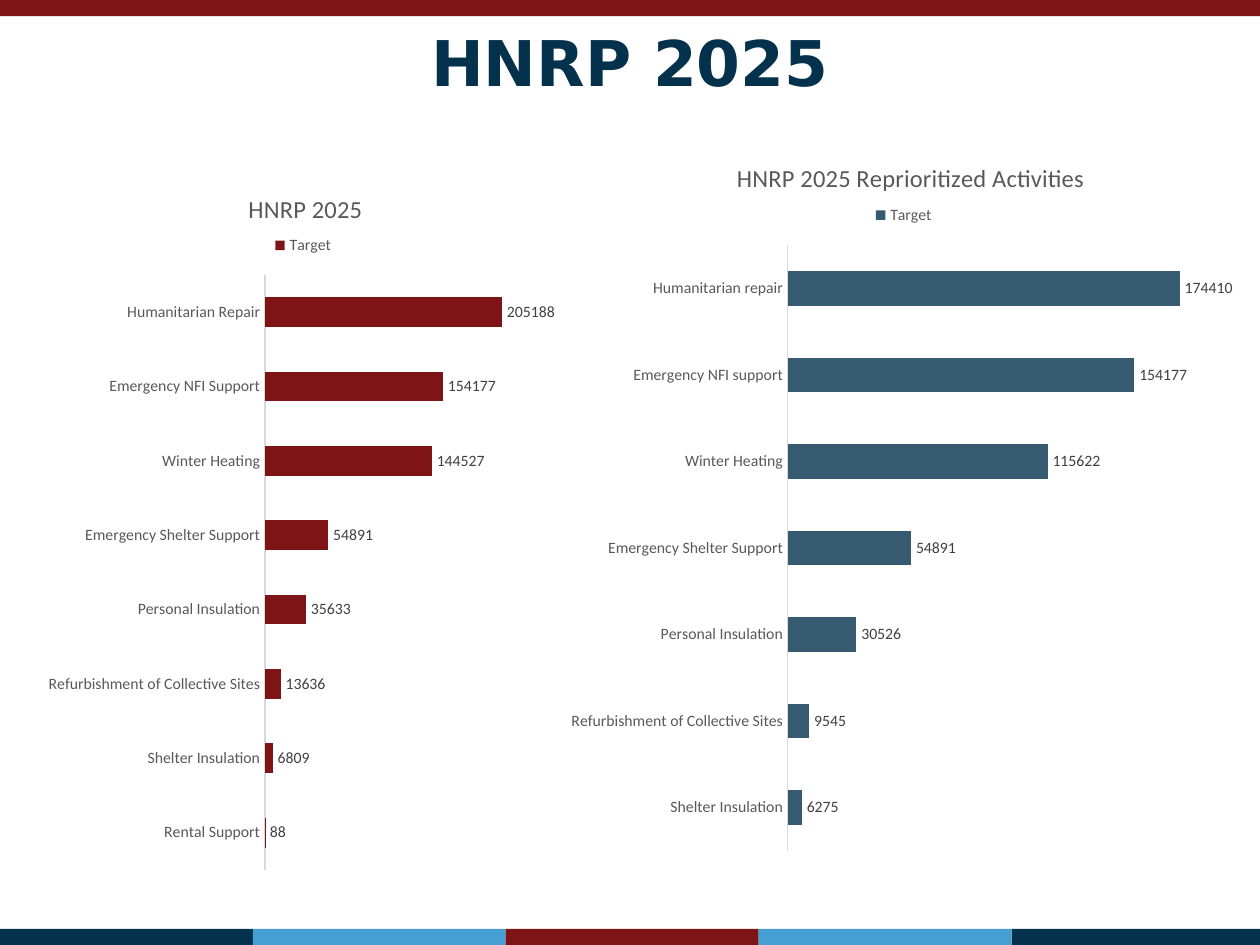
from lxml import etree
from pptx import Presentation
from pptx.chart.data import CategoryChartData
from pptx.dml.color import RGBColor
from pptx.enum import chart as ch, text
from pptx.oxml.ns import qn
from pptx.util import Pt

COLORS = {
    "navy": "04314C", "sky": "459FD5", "red": "7F1416", "slate": "365A70",
    "axis": "D9D9D9", "muted": "595959", "value": "404040",
}
SLIDE_W, SLIDE_H, STRIP_H = 720, 540, 9.2
FOOTER = ["navy", "sky", "red", "sky", "navy"]
FOOTER_STEP = 144.5

ORIGINAL_TARGETS = {
    "Rental Support": 88,
    "Shelter Insulation": 6809,
    "Refurbishment of Collective Sites": 13636,
    "Personal Insulation": 35633,
    "Emergency Shelter Support": 54891,
    "Winter Heating": 144527,
    "Emergency NFI Support": 154177,
    "Humanitarian Repair": 205188,
}
REPRIORITIZED_TARGETS = {
    "Shelter Insulation": 6275,
    "Refurbishment of Collective Sites": 9545,
    "Personal Insulation": 30526,
    "Emergency Shelter Support": 54891,
    "Winter Heating": 115622,
    "Emergency NFI support": 154177,
    "Humanitarian repair": 174410,
}


def rgb(name):
    return RGBColor.from_string(COLORS[name])


def style_font(font, size, color, name="Calibri", bold=False):
    font.name, font.size, font.bold = name, Pt(size), bold
    font.color.rgb = rgb(color)


def add_strip(slide, left, top, width, color):
    strip = slide.shapes.add_shape(1, Pt(left), Pt(top), Pt(width), Pt(STRIP_H))
    strip.shadow.inherit = False
    strip.fill.solid()
    strip.fill.fore_color.rgb = rgb(color)
    strip.line.fill.background()


def add_title(slide, wording):
    title = slide.shapes.title
    title.left, title.top, title.width, title.height = Pt(36), Pt(21.6), Pt(648), Pt(26.6)
    frame = title.text_frame
    frame.text = wording
    frame.auto_size = text.MSO_AUTO_SIZE.NONE
    frame.vertical_anchor = text.MSO_ANCHOR.MIDDLE
    frame.margin_top = frame.margin_bottom = 0
    heading = frame.paragraphs[0]
    heading.alignment = text.PP_ALIGN.CENTER
    style_font(heading.font, 36, "navy", "DejaVu Sans", True)


def set_layout(part, index, **fractions):
    """Place a chart part by fractions of the chart's size."""
    for old in part.findall(qn("c:layout")):
        part.remove(old)
    layout = etree.Element(qn("c:layout"))
    manual = etree.SubElement(layout, qn("c:manualLayout"))
    settings = {"xMode": "edge", "yMode": "edge", **fractions}
    if "w" in fractions:
        settings = {"layoutTarget": "inner", **settings}
    for tag, value in settings.items():
        etree.SubElement(manual, qn(f"c:{tag}")).set("val", str(value))
    part.insert(index, layout)


def add_target_chart(slide, box, title, targets, color, axis_max, title_x, legend_x, plot):
    data = CategoryChartData()
    data.categories = list(targets)
    data.add_series("Target", list(targets.values()))
    chart = slide.shapes.add_chart(
        ch.XL_CHART_TYPE.BAR_CLUSTERED, *map(Pt, box), data).chart
    chart.font.name, chart.font.size = "Calibri", Pt(10)

    chart.has_title = True
    heading = chart.chart_title.text_frame
    heading.text = title
    style_font(heading.paragraphs[0].font, 14, "muted")

    chart.has_legend = True
    chart.legend.position = ch.XL_LEGEND_POSITION.TOP
    chart.legend.include_in_layout = False
    style_font(chart.legend.font, 9, "muted")

    activities, values = chart.category_axis, chart.value_axis
    activities.major_tick_mark = activities.minor_tick_mark = ch.XL_TICK_MARK.NONE
    activities.format.line.color.rgb = rgb("axis")
    activities.format.line.width = Pt(0.75)
    style_font(activities.tick_labels.font, 9, "muted")
    values.visible = values.has_major_gridlines = False
    values.minimum_scale, values.maximum_scale = 0, axis_max

    bars = chart.plots[0]
    bars.gap_width, bars.overlap, bars.vary_by_categories = 150, -25, False
    target = bars.series[0]
    target.format.fill.solid()
    target.format.fill.fore_color.rgb = rgb(color)
    labels = target.data_labels
    labels.show_value = True
    labels.position = ch.XL_LABEL_POSITION.OUTSIDE_END
    style_font(labels.font, 9, "value")

    body = chart.element.find(qn("c:chart"))
    set_layout(body.find(qn("c:title")), 1, x=title_x, y=0.04)
    set_layout(body.find(qn("c:legend")), 1, x=legend_x, y=0.1)
    set_layout(body.find(qn("c:plotArea")), 0, **plot)


def main():
    prs = Presentation()
    prs.slide_width, prs.slide_height = Pt(SLIDE_W), Pt(SLIDE_H)
    slide = prs.slides.add_slide(prs.slide_layouts.get_by_name("Title Only"))

    add_strip(slide, 0, 0, SLIDE_W, "red")
    for i, color in enumerate(FOOTER):
        left = i * FOOTER_STEP
        add_strip(slide, left, SLIDE_H - STRIP_H, min(FOOTER_STEP, SLIDE_W - left), color)

    add_title(slide, "HNRP 2025")
    add_target_chart(
        slide, (319.7, 72.7, 395.3, 421.9), "HNRP 2025 Reprioritized Activities",
        REPRIORITIZED_TARGETS, "slate", 200000, 0.25, 0.45,
        {"x": 0.33, "y": 0.16, "w": 0.65, "h": 0.82})
    add_target_chart(
        slide, (22.3, 90.7, 300.2, 414.7), "HNRP 2025",
        ORIGINAL_TARGETS, "red", 250000, 0.39, 0.44,
        {"x": 0.43, "y": 0.16, "w": 0.55, "h": 0.82})
    prs.save("out.pptx")


if __name__ == "__main__":
    main()
